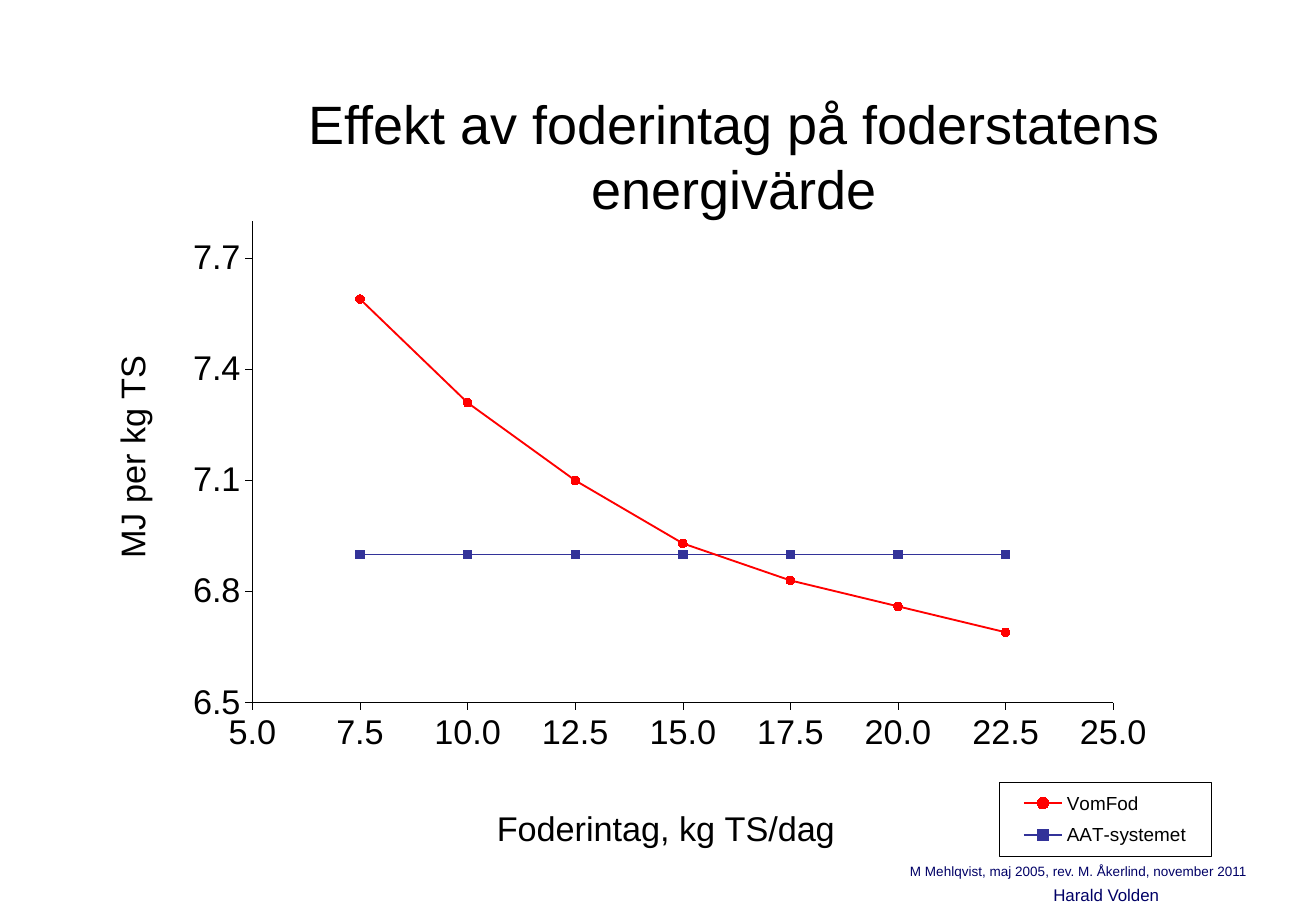
from lxml import etree
from pptx import Presentation
from pptx.chart.data import XyChartData
from pptx.dml.color import RGBColor
from pptx.enum.chart import (XL_CHART_TYPE as CT, XL_LEGEND_POSITION as LP,
                             XL_MARKER_STYLE as MS, XL_TICK_LABEL_POSITION as TLP,
                             XL_TICK_MARK as TM)
from pptx.enum.text import MSO_ANCHOR, PP_ALIGN
from pptx.oxml import parse_xml
from pptx.oxml.ns import nsdecls, qn
from pptx.util import Inches, Pt

BLACK = RGBColor(0x00, 0x00, 0x00)
NAVY = RGBColor(0x00, 0x00, 0x66)
RED = RGBColor(0xFF, 0x00, 0x00)
BLUE = RGBColor(0x33, 0x33, 0x99)

INTAKE = [7.5 + 2.5 * i for i in range(7)]
SERIES = [
    ("VomFod", [7.59, 7.31, 7.1, 6.93, 6.83, 6.76, 6.69], RED, MS.CIRCLE),
    ("AAT-systemet", [6.9] * len(INTAKE), BLUE, MS.SQUARE),
]


def set_font(font, size, color=BLACK):
    font.name, font.size, font.bold = "Arial", Pt(size), False
    font.color.rgb = color


def write(tf, text, size, color=BLACK, align=PP_ALIGN.LEFT):
    p = tf.paragraphs[0]
    p.alignment = align
    r = p.add_run()
    r.text = text
    set_font(r.font, size, color)


def set_layout(parent, index, x, y, w=None, h=None):
    """Place a chart part by fractions of the chart area."""
    for old in parent.findall(qn("c:layout")):
        parent.remove(old)
    layout = parse_xml(f'<c:layout {nsdecls("c")}><c:manualLayout/></c:layout>')
    values = [("xMode", "edge"), ("yMode", "edge"), ("x", x), ("y", y)]
    if w is not None:
        values += [("w", w), ("h", h)]
    if parent.tag == qn("c:plotArea"):
        values.insert(0, ("layoutTarget", "inner"))
    for tag, value in values:
        etree.SubElement(layout[0], qn(f"c:{tag}")).set("val", str(value))
    parent.insert(index, layout)


class SlideBuilder:
    text_size = 20.3
    legend_size = 11.2

    def __init__(self, prs):
        self.s = prs.slides.add_slide(prs.slide_layouts[5])

    def title(self, text, *box):
        sp = self.s.shapes.title
        sp.left, sp.top, sp.width, sp.height = map(Inches, box)
        tf = sp.text_frame
        tf.word_wrap, tf.vertical_anchor = True, MSO_ANCHOR.MIDDLE
        write(tf, text, 32, align=PP_ALIGN.CENTER)

    def text(self, text, size, *box):
        tf = self.s.shapes.add_textbox(*map(Inches, box)).text_frame
        tf.word_wrap = True
        write(tf, text, size, NAVY)

    def axis(self, axis, title, low, high, step, place, rotation=0):
        axis.minimum_scale, axis.maximum_scale, axis.major_unit = low, high, step
        axis.has_major_gridlines = axis.has_minor_gridlines = False
        axis.major_tick_mark, axis.minor_tick_mark = TM.OUTSIDE, TM.NONE
        axis.tick_label_position = TLP.NEXT_TO_AXIS
        axis.tick_labels.number_format = "0.0"
        axis.tick_labels.number_format_is_linked = False
        set_font(axis.tick_labels.font, self.text_size)
        axis.format.line.color.rgb = BLACK
        axis.format.line.width = Pt(0.28)
        write(axis.axis_title.text_frame, title, self.text_size, align=PP_ALIGN.CENTER)
        element = axis.axis_title.element if hasattr(axis.axis_title, "element") else axis.axis_title._element
        next(element.iter(qn("a:bodyPr"))).set("rot", str(rotation * 60000))
        set_layout(element, 1, *place)

    def legend(self, chart, *place):
        chart.has_legend = True
        chart.legend.position = LP.RIGHT
        chart.legend.include_in_layout = False
        set_font(chart.legend.font, self.legend_size)
        element = next(chart.element.iter(qn("c:legend")))
        set_layout(element, 1, *place)
        border = parse_xml(
            f'<c:spPr {nsdecls("c", "a")}><a:noFill/><a:ln w="3556"><a:solidFill>'
            f'<a:srgbClr val="{BLACK}"/></a:solidFill></a:ln></c:spPr>')
        element.find(qn("c:txPr")).addprevious(border)

    def scatter(self, *box):
        data = XyChartData()
        for name, values, _, _ in SERIES:
            series = data.add_series(name)
            for x, y in zip(INTAKE, values):
                series.add_data_point(x, y)
        chart = self.s.shapes.add_chart(CT.XY_SCATTER_SMOOTH, *map(Inches, box), data).chart
        chart.has_title = False
        set_font(chart.font, self.text_size)
        plot = chart.plots[0]
        plot.vary_by_categories = False
        for series, (_, _, color, style) in zip(plot.series, SERIES):
            series.format.line.color.rgb = color
            series.format.line.width = Pt(1.11)
            marker = series.marker
            marker.style, marker.size = style, 5
            marker.format.fill.solid()
            marker.format.fill.fore_color.rgb = color
            marker.format.line.color.rgb = color
        set_layout(next(chart.element.iter(qn("c:plotArea"))), 0, 0.142, 0.253, 0.582, 0.527)
        return chart


def main():
    prs = Presentation()
    prs.slide_width, prs.slide_height = Inches(10.83), Inches(7.5)
    slide = SlideBuilder(prs)

    # Title
    slide.title("Effekt av foderintag på foderstatens energivärde", 1.26, 0.99, 9.57, 0.58)

    # Energy value against feed intake
    chart = slide.scatter(0.35, -0.08, 12.17, 7.52)
    slide.axis(chart.category_axis, "Foderintag, kg TS/dag", 5, 25, 2.5, (0.303, 0.887))
    slide.axis(chart.value_axis, "MJ per kg TS", 6.5, 7.8, 0.3, (0.042, 0.393), rotation=-90)
    slide.legend(chart, 0.647, 0.867, 0.143, 0.081)

    # Credits
    slide.text("M Mehlqvist, maj 2005, rev. M. Åkerlind, november 2011", 8, 7.39, 7.06, 3.23, 0.24)
    slide.text("Harald Volden", 10, 8.57, 7.23, 1.42, 0.27)

    prs.save("out.pptx")


if __name__ == "__main__":
    main()
